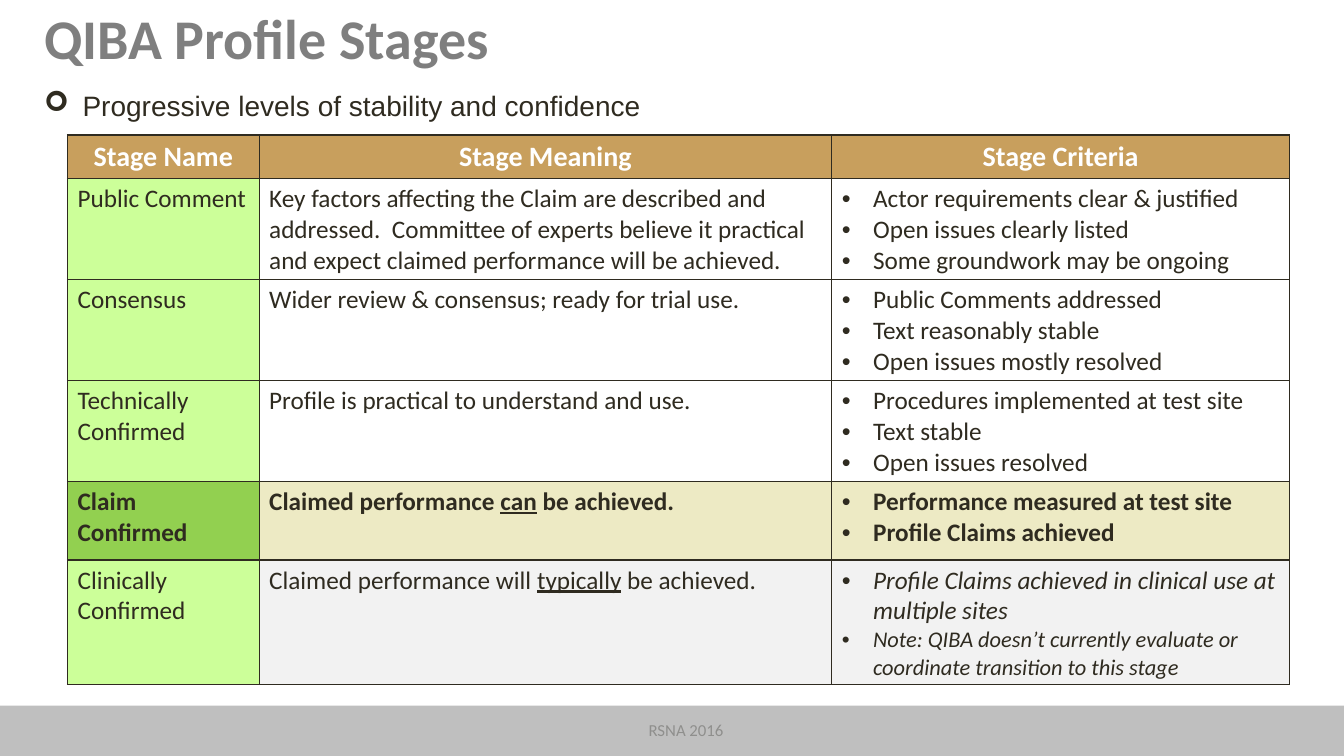
from lxml import etree
from pptx import Presentation, util as u
from pptx.dml.color import RGBColor
from pptx.enum import shapes, text
from pptx.oxml.ns import qn

EMU_PER_PX = 9144  # 100 px to the inch

WHITE = RGBColor(0xFF, 0xFF, 0xFF)
INK = RGBColor(0x2F, 0x2B, 0x20)
TITLE_GREY = RGBColor(0x7F, 0x7F, 0x7F)
FOOTER_GREY = RGBColor(0x8F, 0x8F, 0x8D)
BAR_GREY = RGBColor(0xBF, 0xBF, 0xBF)
TAN = RGBColor(0xC8, 0x9F, 0x5D)
LIME = RGBColor(0xCC, 0xFF, 0x99)
GREEN = RGBColor(0x92, 0xD0, 0x50)
CREAM = RGBColor(0xED, 0xEA, 0xC4)
PALE_GREY = RGBColor(0xF2, 0xF2, 0xF2)

COLUMN_WIDTHS = [190, 568, 454]
ROW_HEIGHTS = [42, 97, 97, 97, 78, 120]
HEADINGS = ["Stage Name", "Stage Meaning", "Stage Criteria"]
# name, meaning (underscores mark underlined words), criteria, name fill, row fill
STAGES = [
    ("Public Comment",
     "Key factors affecting the Claim are described and addressed.  Committee of "
     "experts believe it practical and expect claimed performance will be achieved.",
     ["Actor requirements clear & justified", "Open issues clearly listed",
      "Some groundwork may be ongoing"], LIME, None),
    ("Consensus", "Wider review & consensus; ready for trial use.",
     ["Public Comments addressed", "Text reasonably stable",
      "Open issues mostly resolved"], LIME, None),
    ("Technically Confirmed", "Profile is practical to understand and use.",
     ["Procedures implemented at test site", "Text stable",
      "Open issues resolved"], LIME, None),
    ("Claim Confirmed", "Claimed performance _can_ be achieved.",
     ["Performance measured at test site", "Profile Claims achieved"], GREEN, CREAM),
    ("Clinically Confirmed", "Claimed performance will _typically_ be achieved.",
     ["Profile Claims achieved in clinical use at multiple sites",
      "Note: QIBA doesn’t currently evaluate or coordinate transition to this stage"],
     LIME, PALE_GREY),
]


def px(n):
    return u.Emu(n * EMU_PER_PX)


def style_run(r, size, color, bold=False, italic=False, font="Calibri"):
    f = r.font
    f.name, f.size, f.bold, f.italic = font, u.Pt(size), bold, italic
    f.color.rgb = color


def add_bullet(p, char, indent, font="Arial"):
    """Give the paragraph a hanging bullet, indented by px."""
    pPr = p._p.get_or_add_pPr()
    pPr.set("marL", str(px(indent)))
    pPr.set("indent", str(-px(indent)))
    etree.SubElement(pPr, qn("a:buFont")).set("typeface", font)
    etree.SubElement(pPr, qn("a:buChar")).set("char", char)


def add_label(s, box, label, size, color, anchor=text.MSO_ANCHOR.MIDDLE, **style):
    tf = s.shapes.add_textbox(*map(px, box)).text_frame
    tf.word_wrap = True
    tf.vertical_anchor = anchor
    tf.text = label
    p = tf.paragraphs[0]
    style_run(p.runs[0], size, color, **style)
    return p


def add_footer_bar(s):
    sp = s.shapes.add_shape(shapes.MSO_SHAPE.RECTANGLE, *map(px, (0, 700, 1333, 50)))
    sp.shadow.inherit = False
    sp.fill.solid()
    sp.fill.fore_color.rgb = BAR_GREY
    sp.line.fill.background()


def style_cell(cell, fill):
    if fill is None:
        cell.fill.background()
    else:
        cell.fill.solid()
        cell.fill.fore_color.rgb = fill
    tcPr = cell._tc.get_or_add_tcPr()
    for i, side in enumerate("LRTB"):
        ln = etree.Element(qn(f"a:ln{side}"), w=str(u.Pt(1)))
        solid = etree.SubElement(ln, qn("a:solidFill"))
        etree.SubElement(solid, qn("a:srgbClr")).set("val", str(INK))
        tcPr.insert(i, ln)


def fill_underlined(p, marked, bold):
    """Write text whose underlined words stand between underscores."""
    for i, part in enumerate(marked.split("_")):
        r = p.add_run()
        r.text = part
        style_run(r, 18, INK, bold)
        if i % 2:
            r.font.underline = True


def fill_criteria(cell, criteria, bold, italic):
    cell.text_frame.text = "\n".join(criteria)
    for p in cell.text_frame.paragraphs:
        add_bullet(p, "•", 31)
        size = 16 if p.text.startswith("Note:") else 18
        style_run(p.runs[0], size, INK, bold, italic)


def add_stage_table(s):
    table = s.shapes.add_table(
        len(ROW_HEIGHTS), len(COLUMN_WIDTHS), px(67), px(134),
        px(sum(COLUMN_WIDTHS)), px(sum(ROW_HEIGHTS))).table
    table.first_row = table.horz_banding = False
    for column, width in zip(table.columns, COLUMN_WIDTHS):
        column.width = px(width)
    for row, height in zip(table.rows, ROW_HEIGHTS):
        row.height = px(height)

    for cell, heading in zip(table.rows[0].cells, HEADINGS):
        style_cell(cell, TAN)
        cell.text_frame.text = heading
        p = cell.text_frame.paragraphs[0]
        p.alignment = text.PP_ALIGN.CENTER
        style_run(p.runs[0], 20, WHITE, bold=True)

    for i, (name, meaning, criteria, name_fill, row_fill) in enumerate(STAGES, 1):
        cells = list(table.rows[i].cells)
        bold = name == "Claim Confirmed"
        for cell, fill in zip(cells, (name_fill, row_fill, row_fill)):
            style_cell(cell, fill)
        for cell, words in zip(cells, (name, meaning)):
            fill_underlined(cell.text_frame.paragraphs[0], words, bold)
        fill_criteria(cells[2], criteria, bold, italic=name == "Clinically Confirmed")


def main():
    prs = Presentation()
    prs.slide_width, prs.slide_height = px(1333), px(750)
    s = prs.slides.add_slide(prs.slide_layouts[6])
    add_footer_bar(s)
    title = add_label(s, (34, 0, 1244, 87), "QIBA Profile Stages", 40, TITLE_GREY,
                      bold=True)
    title.line_spacing = 0.8
    footer = add_label(s, (297, 704, 767, 40), "RSNA 2016", 12, FOOTER_GREY)
    footer.alignment = text.PP_ALIGN.CENTER
    add_stage_table(s)
    lead = add_label(s, (34, 77, 792, 49),
                     "Progressive levels of stability and confidence", 20, INK,
                     anchor=text.MSO_ANCHOR.TOP, font="Arial")
    lead.line_spacing = u.Pt(28)
    add_bullet(lead, "➢", 38, "Wingdings")
    prs.save("out.pptx")


if __name__ == "__main__":
    main()
